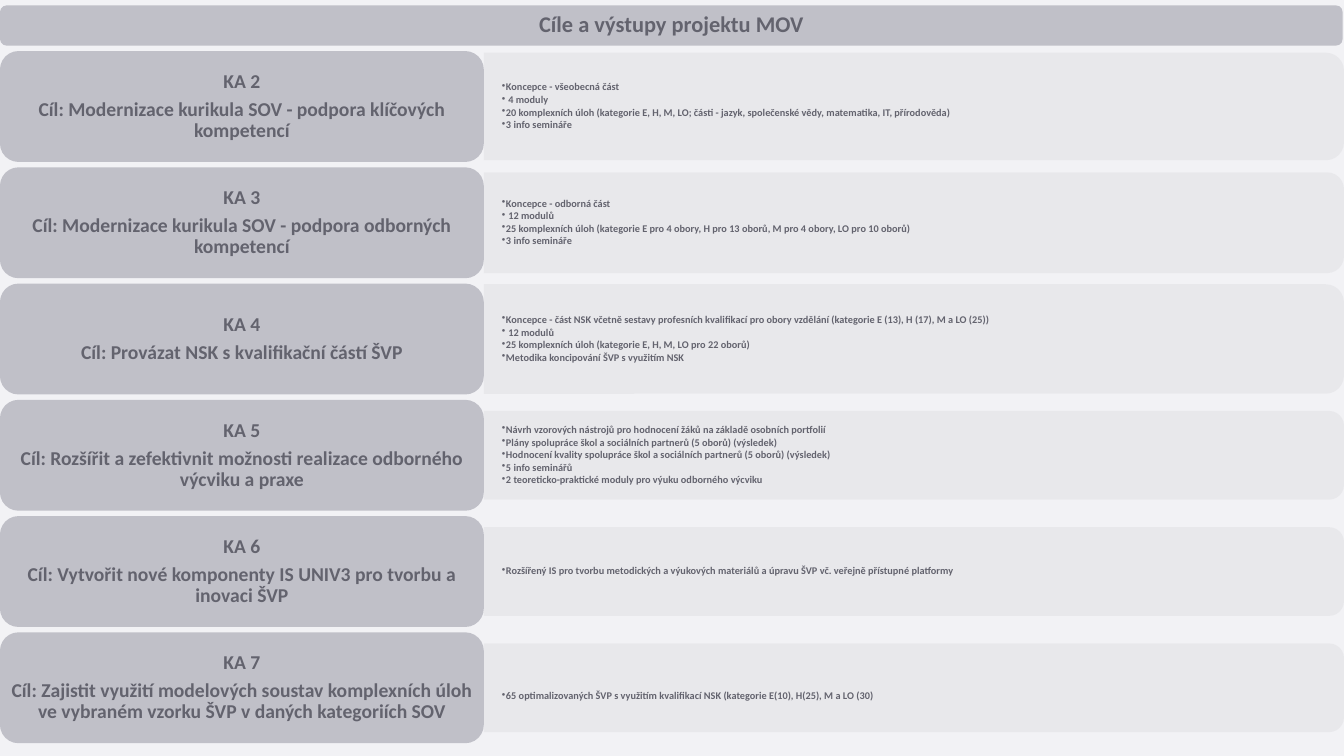
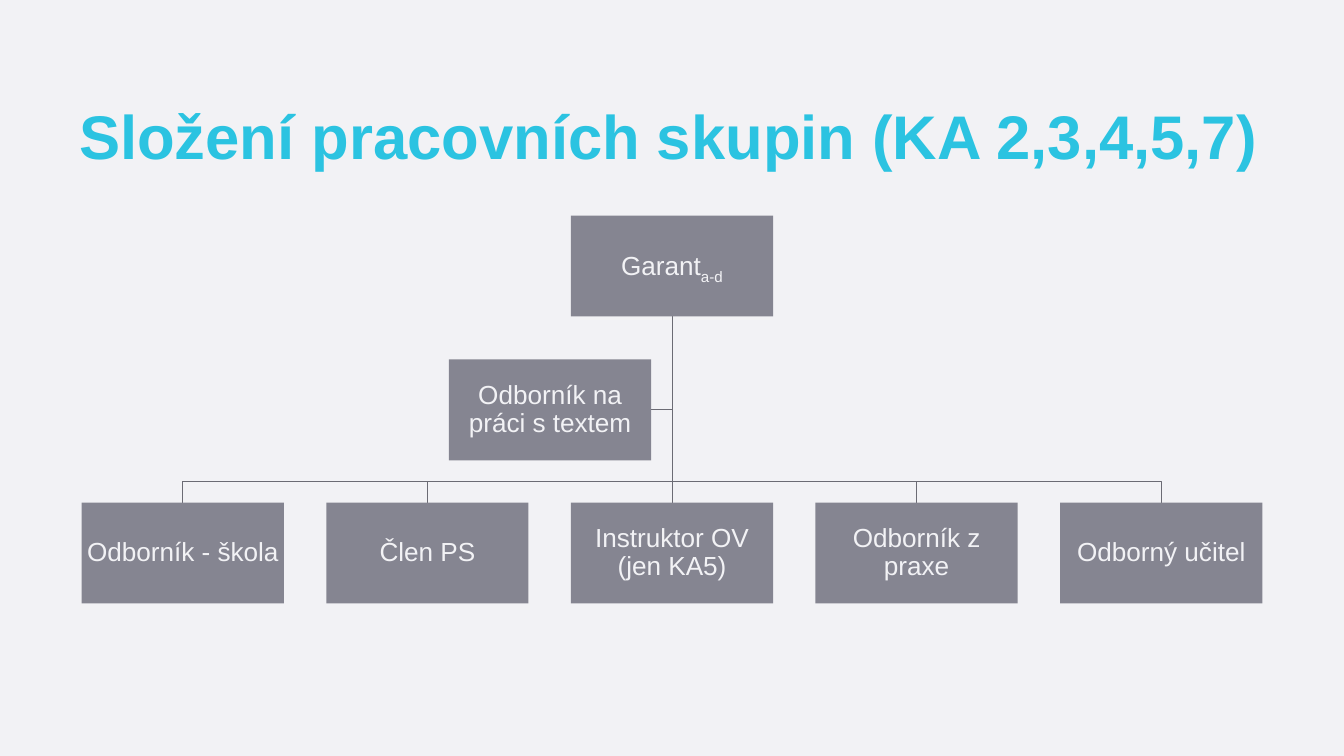
"""Build two slides: project goals by key activity and the make-up of the working groups."""
from dataclasses import dataclass

from lxml.etree import SubElement
from pptx import Presentation
from pptx.dml.color import RGBColor
from pptx.enum.shapes import MSO_CONNECTOR, MSO_SHAPE
from pptx.enum.text import MSO_ANCHOR, PP_ALIGN
from pptx.oxml.ns import qn
from pptx.util import Inches, Pt

GOALS_TITLE = "Cíle a výstupy projektu MOV"
ACTIVITIES = [
    ("KA 2", "Cíl: Modernizace kurikula SOV - podpora klíčových kompetencí", 1.6, [
        "Koncepce - všeobecná část",
        " 4 moduly",
        "20 komplexních úloh (kategorie E, H, M, LO; části - jazyk, společenské vědy, matematika, IT, přírodověda)",
        "3 info semináře",
    ]),
    ("KA 3", "Cíl: Modernizace kurikula SOV - podpora odborných kompetencí", 1.5, [
        "Koncepce - odborná část",
        " 12 modulů",
        "25 komplexních úloh (kategorie E pro 4 obory, H pro 13 oborů, M pro 4 obory, LO pro 10 oborů)",
        "3 info semináře",
    ]),
    ("KA 4", "Cíl: Provázat NSK s kvalifikační částí ŠVP", 1.63, [
        "Koncepce - část NSK včetně sestavy profesních kvalifikací pro obory vzdělání "
        "(kategorie E (13), H (17), M a LO (25))",
        " 12 modulů",
        "25 komplexních úloh (kategorie E, H, M, LO pro 22 oborů)",
        "Metodika koncipování ŠVP s využitím NSK",
    ]),
    ("KA 5", "Cíl: Rozšířit a zefektivnit možnosti realizace odborného výcviku a praxe", 1.32, [
        "Návrh vzorových nástrojů pro hodnocení žáků na základě osobních portfolií",
        "Plány spolupráce škol a sociálních partnerů (5 oborů) (výsledek)",
        "Hodnocení kvality spolupráce škol a sociálních partnerů (5 oborů) (výsledek)",
        "5 info seminářů",
        "2 teoreticko-praktické moduly pro výuku odborného výcviku",
    ]),
    ("KA 6", "Cíl: Vytvořit nové komponenty IS UNIV3 pro tvorbu a inovaci ŠVP", 1.32, [
        "Rozšířený IS pro tvorbu metodických a výukových materiálů a úpravu ŠVP vč. veřejně přístupné platformy",
    ]),
    ("KA 7", "Cíl: Zajistit využití modelových soustav komplexních úloh ve vybraném vzorku ŠVP "
             "v daných kategoriích SOV", 1.32, [
        "65 optimalizovaných ŠVP s využitím kvalifikací NSK (kategorie E(10), H(25), M a LO (30)",
    ]),
]
LOWERED_ACTIVITY = "KA 7"

GROUPS_TITLE = "Složení pracovních skupin (KA 2,3,4,5,7)"
LEADER = ["Garant", "a-d"]
ASSISTANT = "Odborník na práci s textem"
MEMBERS = ["Odborník - škola", "Člen PS", "Instruktor OV (jen KA5)", "Odborník z praxe", "Odborný učitel"]


@dataclass(frozen=True)
class Theme:
    """Colours, fonts and type sizes."""
    background: str = "F2F2F5"
    band: str = "C0C0C8"
    panel: str = "E8E8EB"
    ink: str = "63636E"
    node: str = "858591"
    branch: str = "6B6B74"
    accent: str = "2BC3E1"
    table_font: str = "Calibri"
    chart_font: str = "Arial"
    header_size: float = 24
    label_size: float = 21
    bullet_size: float = 11
    title_size: float = 66
    node_size: float = 28


THEME = Theme()
ROW_TOP, ROW_STEP, LABEL_WIDTH, LABEL_HEIGHT = 0.76, 1.73, 7.2, 1.65
PANEL_WIDTH = 12.8
NODE_WIDTH, NODE_HEIGHT, NODE_STEP = 3.01, 1.5, 3.64
CENTER, LEADER_TOP, ASSISTANT_TOP, MEMBER_TOP, BUS_TOP = 10, 3.21, 5.35, 7.48, 7.17
ASSISTANT_LEFT = 6.68


def color(value):
    return RGBColor.from_string(value)


def add_page(deck):
    page = deck.slides.add_slide(deck.slide_layouts[6])
    page.background.fill.solid()
    page.background.fill.fore_color.rgb = color(THEME.background)
    return page


def add_box(page, kind, place, fill):
    box = page.shapes.add_shape(kind, *map(Inches, place))
    box.shadow.inherit = False
    box.fill.solid()
    box.fill.fore_color.rgb = color(fill)
    box.line.fill.background()
    return box


def set_frame(box, insets, anchor=MSO_ANCHOR.MIDDLE):
    frame = box.text_frame
    frame.word_wrap = True
    frame.vertical_anchor = anchor
    frame.margin_left, frame.margin_top, frame.margin_right, frame.margin_bottom = map(Inches, insets)
    return frame


def add_span(para, text, font, size, ink, bold):
    span = para.add_run()
    span.text = text
    span.font.name = font
    span.font.size = Pt(size)
    span.font.color.rgb = color(ink)
    span.font.bold = bold
    return span


def write(frame, lines, font, size, ink, bold=True, align=PP_ALIGN.CENTER, after=0.35):
    for index, line in enumerate(lines):
        para = frame.paragraphs[0] if index == 0 else frame.add_paragraph()
        para.alignment = align
        para.line_spacing = 0.9
        para.space_after = Pt(round(size * after, 1))
        add_span(para, line, font, size, ink, bold)


def add_bullet(para):
    para.level = 1
    properties = para._p.get_or_add_pPr()
    properties.set("marL", str(Inches(0.06)))
    properties.set("indent", str(Inches(-0.06)))
    SubElement(properties, qn("a:buChar"), char="•")


def add_panel(page, middle, height, outputs, drop):
    left = LABEL_WIDTH + (PANEL_WIDTH - height) / 2
    panel = add_box(page, MSO_SHAPE.ROUND_2_SAME_RECTANGLE,
                    (left, middle - PANEL_WIDTH / 2, height, PANEL_WIDTH), THEME.panel)
    panel.rotation = 90
    tint = panel.element.spPr.find(qn("a:solidFill"))[0]
    SubElement(tint, qn("a:alpha"), val="90000")
    place = (LABEL_WIDTH, middle - height / 2, PANEL_WIDTH, height)
    box = page.shapes.add_textbox(*map(Inches, place))
    frame = set_frame(box, (0.27, 0.14 + drop, 0.27, 0.14))
    write(frame, outputs, THEME.table_font, THEME.bullet_size, THEME.ink, align=PP_ALIGN.LEFT, after=0.15)
    for para in frame.paragraphs:
        add_bullet(para)


def build_goals(deck):
    page = add_page(deck)
    header = add_box(page, MSO_SHAPE.ROUNDED_RECTANGLE, (0, 0.08, 19.98, 0.6), THEME.band)
    write(set_frame(header, (0, 0, 0, 0)), [GOALS_TITLE], THEME.table_font, THEME.header_size, THEME.ink)
    for row, (code, goal, height, outputs) in enumerate(ACTIVITIES):
        top = ROW_TOP + row * ROW_STEP
        drop = 0.26 if code == LOWERED_ACTIVITY else 0
        add_panel(page, top + LABEL_HEIGHT / 2, height, outputs, drop)
        label = add_box(page, MSO_SHAPE.ROUNDED_RECTANGLE, (0, top, LABEL_WIDTH, LABEL_HEIGHT), THEME.band)
        write(set_frame(label, (0.09, 0.04, 0.09, 0.04)), [code, goal],
              THEME.table_font, THEME.label_size, THEME.ink)


def add_branch(page, points):
    start, *rest = [(Inches(x), Inches(y)) for x, y in points]
    if len(rest) == 1:
        branch = page.shapes.add_connector(MSO_CONNECTOR.STRAIGHT, *start, *rest[0])
        SubElement(branch.element.spPr, qn("a:effectLst"))
    else:
        builder = page.shapes.build_freeform(*start)
        builder.add_line_segments(rest, close=False)
        branch = builder.convert_to_shape()
        branch.fill.background()
        branch.shadow.inherit = False
    branch.line.color.rgb = color(THEME.branch)
    branch.line.width = Pt(1)


def add_node(page, left, top, text):
    node = add_box(page, MSO_SHAPE.RECTANGLE, (left, top, NODE_WIDTH, NODE_HEIGHT), THEME.node)
    frame = set_frame(node, (0.02, 0.02, 0.02, 0.02))
    write(frame, [text], THEME.chart_font, THEME.node_size, THEME.background, bold=False)
    return frame.paragraphs[0]


def build_groups(deck):
    page = add_page(deck)
    title = page.shapes.add_textbox(*map(Inches, (1, 1.49, 18, 1.75)))
    write(set_frame(title, (0.18, 0.09, 0.18, 0.09), MSO_ANCHOR.TOP), [GROUPS_TITLE],
          THEME.chart_font, THEME.title_size, THEME.accent, align=PP_ALIGN.LEFT, after=0)

    root = (CENTER, LEADER_TOP + NODE_HEIGHT)
    assistant_middle = ASSISTANT_TOP + NODE_HEIGHT / 2
    add_branch(page, [root, (CENTER, assistant_middle), (ASSISTANT_LEFT + NODE_WIDTH, assistant_middle)])
    middles = [CENTER + (index - len(MEMBERS) // 2) * NODE_STEP for index in range(len(MEMBERS))]
    for middle in middles:
        bend = [] if middle == CENTER else [(CENTER, BUS_TOP), (middle, BUS_TOP)]
        add_branch(page, [root, *bend, (middle, MEMBER_TOP)])

    leader, suffix = LEADER
    para = add_node(page, CENTER - NODE_WIDTH / 2, LEADER_TOP, leader)
    span = add_span(para, suffix, THEME.chart_font, THEME.node_size, THEME.background, False)
    span.font._element.set("baseline", "-25000")
    for middle, member in zip(middles, MEMBERS):
        add_node(page, middle - NODE_WIDTH / 2, MEMBER_TOP, member)
    add_node(page, ASSISTANT_LEFT, ASSISTANT_TOP, ASSISTANT)


def main():
    deck = Presentation()
    deck.slide_width = Inches(20)
    deck.slide_height = Inches(11.25)
    build_goals(deck)
    build_groups(deck)
    deck.save("out.pptx")


if __name__ == "__main__":
    main()
